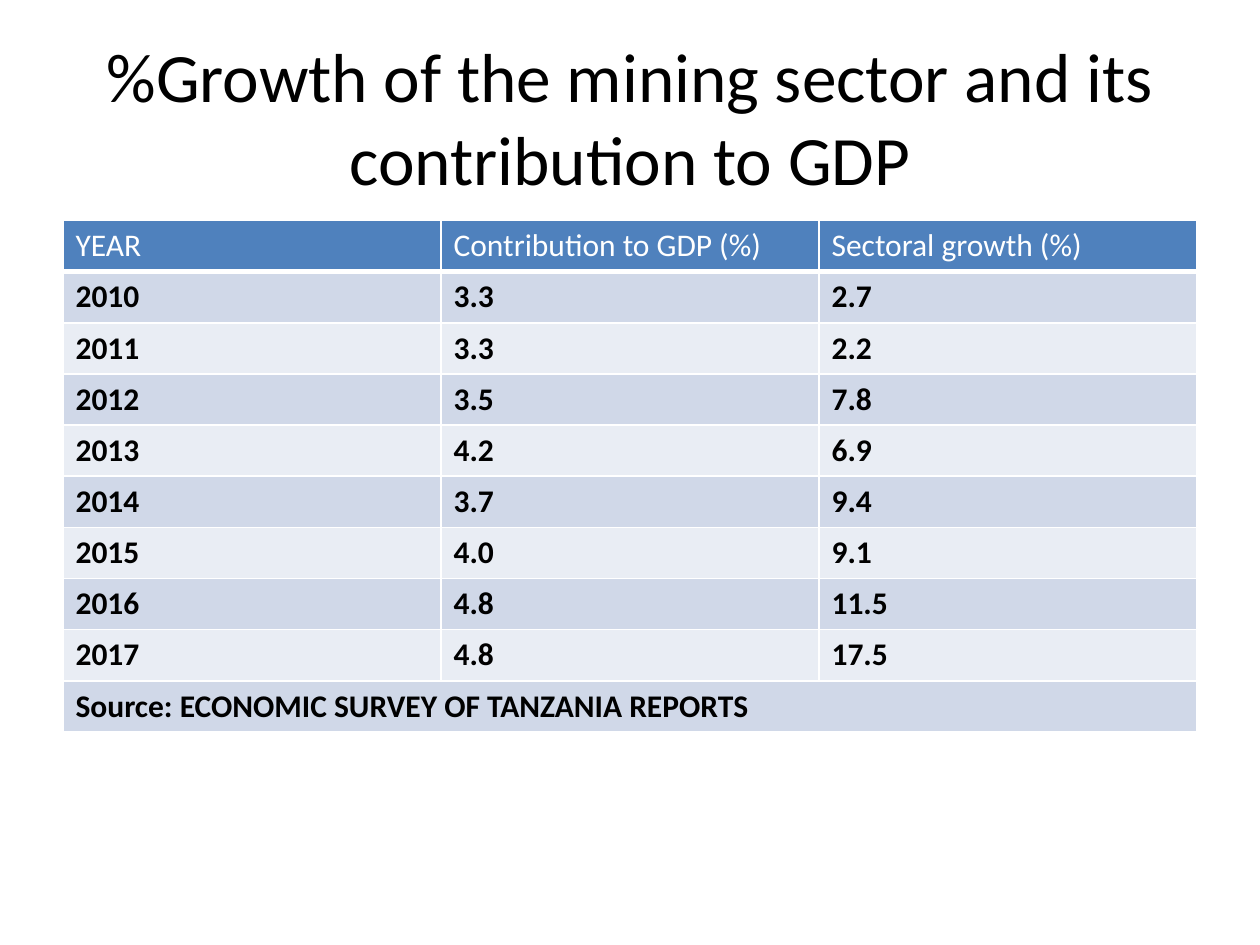
import dataclasses

import pptx
import pptx.dml.color
import pptx.enum.text
import pptx.oxml
import pptx.oxml.ns
import pptx.util

Inches = pptx.util.Inches
Pt = pptx.util.Pt


@dataclasses.dataclass(frozen=True)
class Theme:
    font: str = "Calibri"
    text: str = "000000"
    light: str = "FFFFFF"
    header: str = "4F81BD"
    bands: tuple = ("D0D8E8", "E9EDF4")
    title_size: float = 39.6
    table_size: float = 18
    line: float = 1
    header_line: float = 3


class SlideBuilder:
    def __init__(self, s, theme):
        self.s = s
        self.theme = theme

    def run(self, p, text, size, color, bold=False):
        r = p.add_run()
        r.text = text
        r.font.name = self.theme.font
        r.font.size = Pt(size)
        r.font.bold = bold
        r.font.color.rgb = pptx.dml.color.RGBColor.from_string(color)

    def title(self, text, left, top, width, height):
        sp = self.s.shapes.title
        sp.left, sp.top, sp.width, sp.height = map(Inches, (left, top, width, height))
        tf = sp.text_frame
        tf.word_wrap = True
        tf.auto_size = pptx.enum.text.MSO_AUTO_SIZE.NONE
        tf.vertical_anchor = pptx.enum.text.MSO_ANCHOR.MIDDLE
        p = tf.paragraphs[0]
        p.alignment = pptx.enum.text.PP_ALIGN.CENTER
        self.run(p, text, self.theme.title_size, self.theme.text)

    def borders(self, cell, bottom):
        tc_pr = cell._tc.get_or_add_tcPr()
        widths = {"L": self.theme.line, "R": self.theme.line, "T": self.theme.line, "B": bottom}
        for i, (side, width) in enumerate(widths.items()):
            tc_pr.insert(i, pptx.oxml.parse_xml(
                f'<a:ln{side} {pptx.oxml.ns.nsdecls("a")} w="{Pt(width)}">'
                f'<a:solidFill><a:srgbClr val="{self.theme.light}"/></a:solidFill>'
                f'</a:ln{side}>'))

    def cell(self, cell, text, row):
        t = self.theme
        is_header = row == 0
        fill = t.header if is_header else t.bands[(row - 1) % 2]
        cell.fill.solid()
        cell.fill.fore_color.rgb = pptx.dml.color.RGBColor.from_string(fill)
        self.borders(cell, t.header_line if is_header else t.line)
        if text:
            self.run(cell.text_frame.paragraphs[0], text, t.table_size,
                     t.light if is_header else t.text, bold=not is_header)

    def table(self, rows, source, left, top, width, height):
        columns = len(rows[0])
        rows = [*rows, (source,) + ("",) * (columns - 1)]
        table = self.s.shapes.add_table(
            len(rows), columns, *map(Inches, (left, top, width, height))).table
        for i, values in enumerate(rows):
            for j, text in enumerate(values):
                self.cell(table.cell(i, j), text, i)
        last = len(rows) - 1
        table.cell(last, 0).merge(table.cell(last, columns - 1))


def main():
    prs = pptx.Presentation()
    prs.slide_width, prs.slide_height = Inches(10), Inches(7.5)
    s = prs.slides.add_slide(prs.slide_layouts[5])
    builder = SlideBuilder(s, Theme())
    builder.title("%Growth of the mining sector and its contribution to GDP", 0.5, 0.3, 9, 1.25)
    rows = [
        ("YEAR", "Contribution to GDP (%)", "Sectoral growth (%)"),
        ("2010", "3.3", "2.7"),
        ("2011", "3.3", "2.2"),
        ("2012", "3.5", "7.8"),
        ("2013", "4.2", "6.9"),
        ("2014", "3.7", "9.4"),
        ("2015", "4.0", "9.1"),
        ("2016", "4.8", "11.5"),
        ("2017", "4.8", "17.5"),
    ]
    builder.table(rows, "Source: ECONOMIC SURVEY OF TANZANIA REPORTS", 0.5, 1.75, 9, 4.06)
    prs.save("out.pptx")


if __name__ == "__main__":
    main()
